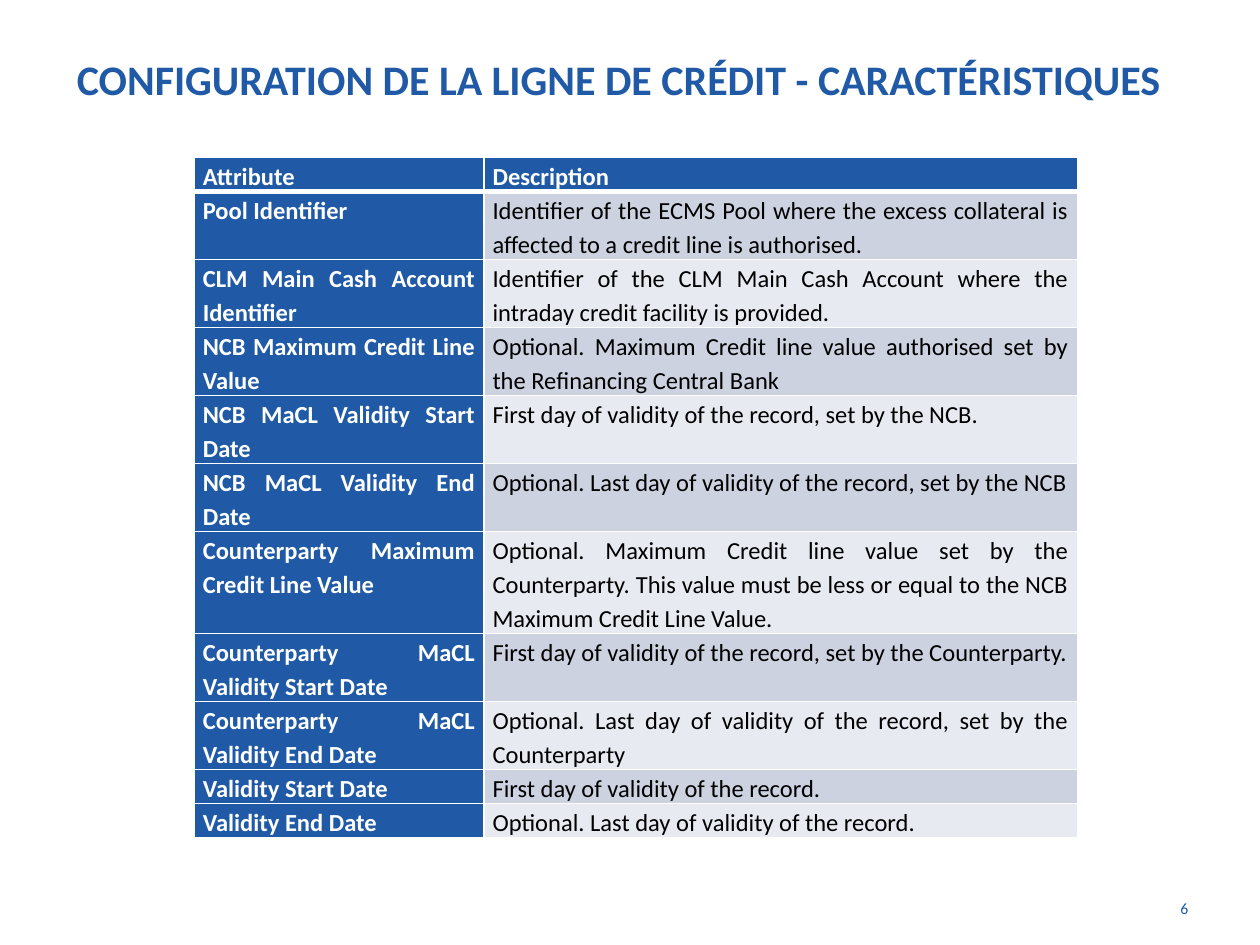
from lxml.etree import SubElement
from pptx import Presentation
from pptx.dml.color import RGBColor
from pptx.enum.text import MSO_ANCHOR as Anchor, PP_ALIGN as Align
from pptx.oxml.ns import qn
from pptx.util import Inches, Pt

WIDTH, HEIGHT = 10, 7.5
BLUE, WHITE, BLACK = "205AA7", "FFFFFF", "000000"
BANDS = ["CDD2E1", "E8EAF1"]
LINE_HEIGHT = 0.27
COLUMN_SHARES = [0.328, 0.672]

HEADINGS = ("Attribute", "Description", 1)
ATTRIBUTES = [
    ("Pool Identifier",
     "Identifier of the ECMS Pool where the excess collateral is affected "
     "to a credit line is authorised.", 2),
    ("CLM Main Cash Account Identifier",
     "Identifier of the CLM Main Cash Account where the intraday credit "
     "facility is provided.", 2),
    ("NCB Maximum Credit Line Value",
     "Optional. Maximum Credit line value authorised set by the "
     "Refinancing Central Bank", 2),
    ("NCB MaCL Validity Start Date",
     "First day of validity of the record, set by the NCB.", 2),
    ("NCB MaCL Validity End Date",
     "Optional. Last day of validity of the record, set by the NCB", 2),
    ("Counterparty Maximum Credit Line Value",
     "Optional. Maximum Credit line value set by the Counterparty. This "
     "value must be less or equal to the NCB Maximum Credit Line Value.", 3),
    ("Counterparty MaCL Validity Start Date",
     "First day of validity of the record, set by the Counterparty.", 2),
    ("Counterparty MaCL Validity End Date",
     "Optional. Last day of validity of the record, set by the "
     "Counterparty", 2),
    ("Validity Start Date", "First day of validity of the record.", 1),
    ("Validity End Date", "Optional. Last day of validity of the record.", 1),
]


def color(code):
    return RGBColor.from_string(code)


def share_box(left, top, width, height):
    return [Inches(left * WIDTH), Inches(top * HEIGHT),
            Inches(width * WIDTH), Inches(height * HEIGHT)]


def write(frame, text, size, code, bold=False, align=Align.LEFT):
    frame.word_wrap = True
    paragraph = frame.paragraphs[0]
    paragraph.alignment = align
    run = paragraph.add_run()
    run.text = text
    run.font.name = "Calibri"
    run.font.size = Pt(size)
    run.font.bold = bold
    run.font.color.rgb = color(code)
    return paragraph


def set_borders(cell, widths):
    properties = cell._tc.get_or_add_tcPr()
    for position, (side, width) in enumerate(widths.items()):
        line = properties.makeelement(qn(f"a:ln{side}"), {"w": str(Pt(width))})
        fill = SubElement(line, qn("a:solidFill"))
        SubElement(fill, qn("a:srgbClr"), val=WHITE)
        properties.insert(position, line)


def place_title(slide, box):
    title = slide.shapes.title
    title.left, title.top, title.width, title.height = box
    title.text_frame.vertical_anchor = Anchor.MIDDLE
    write(title.text_frame,
          "CONFIGURATION DE LA LIGNE DE CRÉDIT - CARACTÉRISTIQUES",
          24, BLUE, bold=True)


def place_page_number(slide, box):
    number = slide.shapes.add_textbox(*box)
    write(number.text_frame, "6", 9, BLUE, align=Align.RIGHT)


def place_attributes(slide, box):
    entries = [HEADINGS] + ATTRIBUTES
    table = slide.shapes.add_table(len(entries), 2, *box).table
    for column, share in zip(table.columns, COLUMN_SHARES):
        column.width = int(box[2] * share)
    for index, (attribute, description, lines) in enumerate(entries):
        table.rows[index].height = Inches(lines * LINE_HEIGHT)
        for side, text in enumerate((attribute, description)):
            cell = table.cell(index, side)
            strong = index == 0 or side == 0
            cell.margin_left = cell.margin_right = Inches(0.07)
            cell.margin_top = cell.margin_bottom = 0
            cell.fill.solid()
            cell.fill.fore_color.rgb = color(
                BLUE if strong else BANDS[(index - 1) % 2])
            paragraph = write(cell.text_frame, text, 14,
                              WHITE if strong else BLACK, bold=strong,
                              align=Align.JUSTIFY if index else Align.LEFT)
            paragraph.line_spacing = 1.15
            set_borders(cell, {"L": 1, "R": 1,
                               "T": 3 if index == 1 else 1,
                               "B": 1 if index else 3})


def main():
    deck = Presentation()
    deck.slide_width, deck.slide_height = Inches(WIDTH), Inches(HEIGHT)
    slide = deck.slides.add_slide(deck.slide_layouts[5])
    place_title(slide, share_box(0.051, 0, 0.949, 1 / 6))
    place_page_number(slide, share_box(0.894, 0.945, 0.059, 0.052))
    place_attributes(slide, share_box(0.154, 1 / 6, 0.701, 0.716))
    deck.save("out.pptx")


if __name__ == "__main__":
    main()
